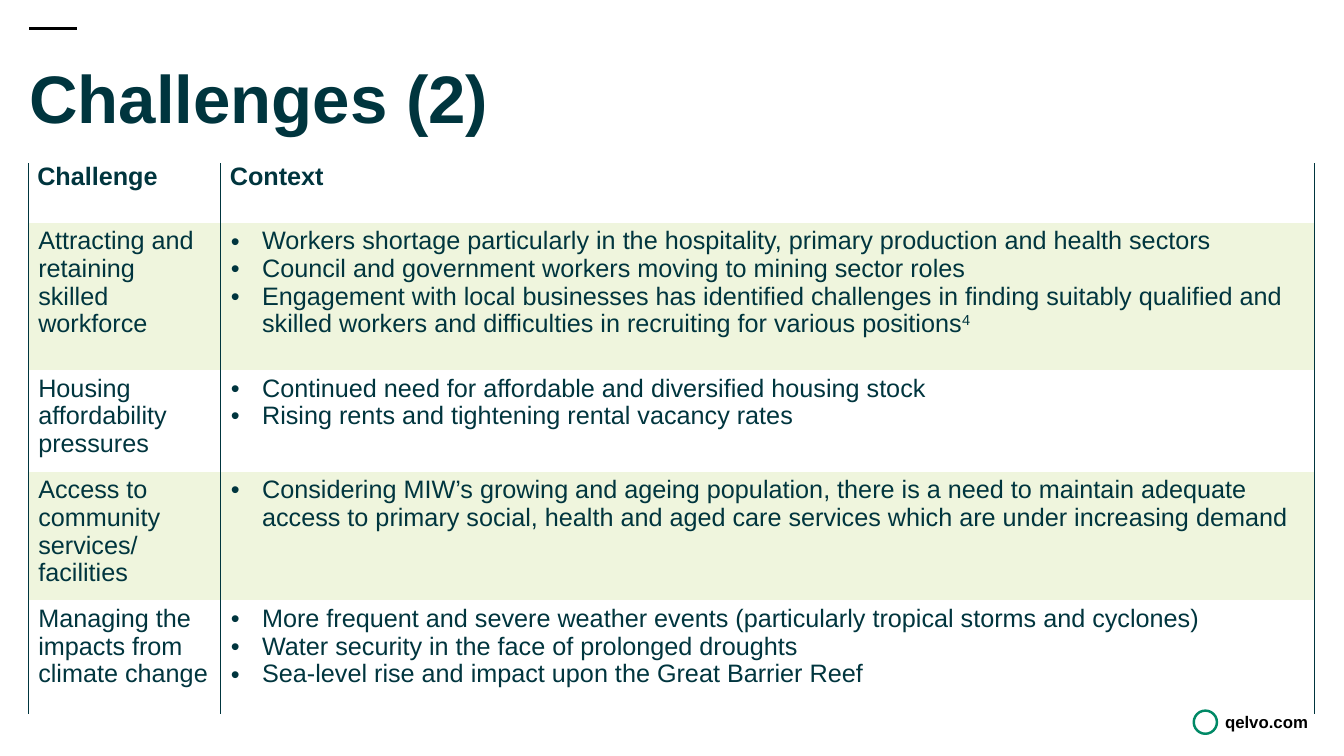
from lxml import etree
from pptx import Presentation
from pptx.dml.color import RGBColor
from pptx.enum.shapes import MSO_CONNECTOR, MSO_SHAPE
from pptx.enum.text import MSO_ANCHOR
from pptx.oxml.ns import qn
from pptx.util import Inches, Pt

STRAIGHT = MSO_CONNECTOR.STRAIGHT
OVAL = MSO_SHAPE.OVAL
TOP, MIDDLE = MSO_ANCHOR.TOP, MSO_ANCHOR.MIDDLE

SLIDE_WIDTH, SLIDE_HEIGHT = 13.33, 7.5
MARGIN = 0.29
CONTENT_WIDTH = SLIDE_WIDTH - 2 * MARGIN
TEAL, GREEN, BLACK, BAND = "00353E", "008966", "000000", "EFF5DD"

TITLE = "Challenges (2)"
WEB_ADDRESS = "qelvo.com"
HEADINGS = ["Challenge", "Context"]
CHALLENGES = [
    ("Attracting and retaining skilled workforce", [
        ("Workers shortage particularly in the hospitality, primary production and health sectors", ""),
        ("Council and government workers moving to mining sector roles", ""),
        ("Engagement with local businesses has identified challenges in finding suitably qualified and "
         "skilled workers and difficulties in recruiting for various positions", "4"),
    ]),
    ("Housing affordability pressures", [
        ("Continued need for affordable and diversified housing stock", ""),
        ("Rising rents and tightening rental vacancy rates", ""),
    ]),
    ("Access to community services/ facilities", [
        ("Considering MIW’s growing and ageing population, there is a need to maintain adequate "
         "access to primary social, health and aged care services which are under increasing demand", ""),
    ]),
    ("Managing the impacts from climate change", [
        ("More frequent and severe weather events (particularly tropical storms and cyclones)", ""),
        ("Water security in the face of prolonged droughts", ""),
        ("Sea-level rise and impact upon the Great Barrier Reef", ""),
    ]),
]
COLUMN_WIDTHS = [1.91, 10.85]
ROW_HEIGHTS = [0.59, 1.46, 1.01, 1.01, 1.13]
TABLE_LEFT, TABLE_TOP = 0.28, 1.62
BULLET_INDENT = 0.31

TITLE_FORMAT = {"name": "Arial", "size": Pt(48), "bold": True}
HEADING_FORMAT = {"name": "Arial", "size": Pt(18), "bold": True}
BODY_FORMAT = {"name": "Arial", "size": Pt(18), "bold": False}
ADDRESS_FORMAT = {"name": "Arial", "size": Pt(12), "bold": True}
HEADING_MARGINS = {"margin_left": 0.09, "margin_top": 0, "margin_right": 0.09, "margin_bottom": 0.2}
BODY_MARGINS = {"margin_left": 0.1, "margin_top": 0.05, "margin_right": 0.1, "margin_bottom": 0.05}
NO_MARGINS = dict.fromkeys(BODY_MARGINS, 0)


def color(value):
    return RGBColor.from_string(value)


def set_margins(target, margins):
    for name, length in margins.items():
        setattr(target, name, Inches(length))


def add_run(paragraph, text, text_format, text_color=TEAL):
    run = paragraph.add_run()
    run.text = text
    for name, value in text_format.items():
        setattr(run.font, name, value)
    run.font.color.rgb = color(text_color)
    return run


def add_text(slide, box, text, text_format, text_color, anchor, spacing):
    frame = slide.shapes.add_textbox(*map(Inches, box)).text_frame
    frame.word_wrap = True
    frame.vertical_anchor = anchor
    set_margins(frame, NO_MARGINS)
    paragraph = frame.paragraphs[0]
    paragraph.line_spacing = spacing
    add_run(paragraph, text, text_format, text_color)


def add_bullet(paragraph):
    properties = paragraph._p.get_or_add_pPr()
    properties.set("marL", str(Inches(BULLET_INDENT)))
    properties.set("indent", str(-Inches(BULLET_INDENT)))
    etree.SubElement(properties, qn("a:buFont"), typeface="Arial")
    etree.SubElement(properties, qn("a:buChar"), char="•")


def set_borders(cell):
    properties = cell._tc.get_or_add_tcPr()
    for position, side in enumerate(["L", "R", "T", "B"]):
        border = etree.Element(qn("a:ln" + side), w=str(Pt(0.5)))
        if side in "LR":
            fill = etree.SubElement(border, qn("a:solidFill"))
            etree.SubElement(fill, qn("a:srgbClr"), val=TEAL)
        else:
            etree.SubElement(border, qn("a:noFill"))
        properties.insert(position, border)


def fill_cell(cell, items, text_format, margins, banded, bulleted):
    set_margins(cell, margins)
    cell.vertical_anchor = TOP
    if banded:
        cell.fill.solid()
        cell.fill.fore_color.rgb = color(BAND)
    else:
        cell.fill.background()
    set_borders(cell)
    frame = cell.text_frame
    for number, (text, note) in enumerate(items):
        paragraph = frame.add_paragraph() if number else frame.paragraphs[0]
        paragraph.line_spacing = 0.98
        if bulleted:
            add_bullet(paragraph)
        add_run(paragraph, text, text_format)
        if note:
            note_run = add_run(paragraph, note, text_format)
            note_run._r.get_or_add_rPr().set("baseline", "30000")


def add_challenge_table(slide):
    box = (TABLE_LEFT, TABLE_TOP, sum(COLUMN_WIDTHS), sum(ROW_HEIGHTS))
    table = slide.shapes.add_table(
        len(ROW_HEIGHTS), len(COLUMN_WIDTHS), *map(Inches, box)).table
    table.first_row = table.horz_banding = False
    for column, width in zip(table.columns, COLUMN_WIDTHS):
        column.width = Inches(width)
    for row, height in zip(table.rows, ROW_HEIGHTS):
        row.height = Inches(height)
    for column, heading in enumerate(HEADINGS):
        fill_cell(table.cell(0, column), [(heading, "")], HEADING_FORMAT, HEADING_MARGINS, False, False)
    for row, (challenge, contexts) in enumerate(CHALLENGES, 1):
        for column, items in enumerate([[(challenge, "")], contexts]):
            fill_cell(table.cell(row, column), items, BODY_FORMAT, BODY_MARGINS, row % 2 == 1, column == 1)


def add_accent_line(slide):
    ends = (MARGIN, 0.28, 0.76, 0.28)
    accent = slide.shapes.add_connector(STRAIGHT, *map(Inches, ends))
    accent.line.color.rgb = color(BLACK)
    accent.line.width = Pt(2)
    etree.SubElement(accent._element.spPr, qn("a:effectLst"))


def add_footer(slide):
    mark = slide.shapes.add_shape(OVAL, *map(Inches, (11.84, 7.05, 0.23, 0.23)))
    mark.shadow.inherit = False
    mark.fill.background()
    mark.line.color.rgb = color(GREEN)
    mark.line.width = Pt(1.75)
    add_text(slide, (12.15, 7.04, 0.95, 0.25), WEB_ADDRESS, ADDRESS_FORMAT, BLACK, MIDDLE, 1.0)


def main():
    presentation = Presentation()
    presentation.slide_width = Inches(SLIDE_WIDTH)
    presentation.slide_height = Inches(SLIDE_HEIGHT)
    slide = presentation.slides.add_slide(presentation.slide_layouts[6])
    add_accent_line(slide)
    add_footer(slide)
    add_text(slide, (MARGIN, 0.48, CONTENT_WIDTH, 0.71), TITLE, TITLE_FORMAT, TEAL, TOP, 1.1)
    add_challenge_table(slide)
    presentation.save("out.pptx")


if __name__ == "__main__":
    main()
